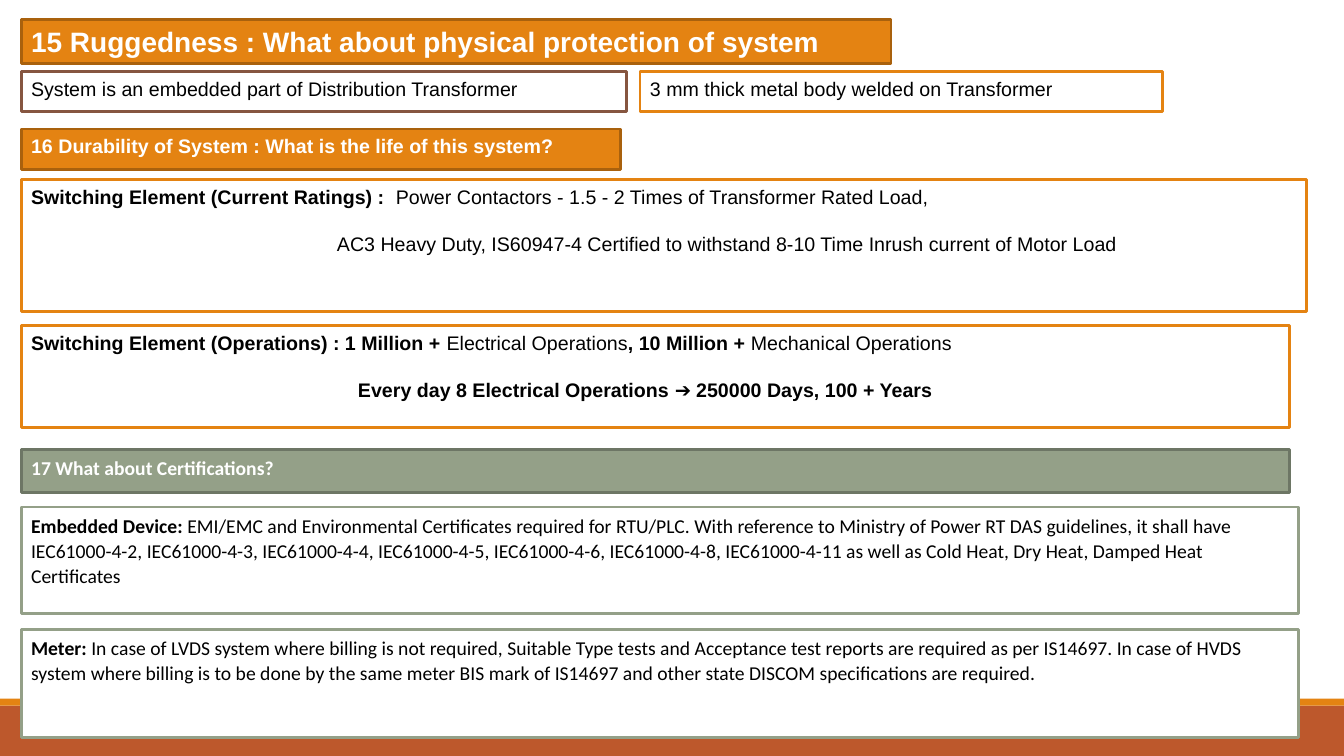
from pptx import Presentation
from pptx.dml.color import RGBColor
from pptx.enum.shapes import MSO_SHAPE
from pptx.enum.text import MSO_ANCHOR, PP_ALIGN
from pptx.util import Pt

COLORS = {
    "orange": "E48312",
    "dark_orange": "A9610D",
    "rust": "BD582C",
    "brown": "865640",
    "sage": "94A088",
    "dark_sage": "6D7665",
    "white": "FFFFFF",
    "black": "000000",
}
LEFT = 15.1
SECOND_LINE_GAP = 17


def rgb(name):
    return RGBColor.from_string(COLORS[name])


def add_bar(slide, left, top, width, height, fill, outline=None):
    bar = slide.shapes.add_shape(
        MSO_SHAPE.RECTANGLE, Pt(left), Pt(top), Pt(width), Pt(height))
    bar.shadow.inherit = False
    bar.fill.solid()
    bar.fill.fore_color.rgb = rgb(fill)
    if outline:
        bar.line.color.rgb = rgb(outline)
        bar.line.width = Pt(2)
    else:
        bar.line.fill.background()
    return bar


def add_line(frame, runs, color, font, size, indent=0):
    """Write one paragraph of (text, bold) runs; an indented one continues the line above."""
    line = frame.paragraphs[0]
    if indent:
        line = frame.add_paragraph()
        line.space_before = Pt(SECOND_LINE_GAP)
        line._p.get_or_add_pPr().set("marL", str(Pt(indent)))
    line.alignment = PP_ALIGN.LEFT
    if font == "Calibri":
        line.line_spacing = 1.07
        line.space_after = Pt(8)
    for text, bold in runs:
        run = line.add_run()
        run.text = text
        run.font.name = font
        run.font.size = Pt(size)
        run.font.bold = bold
        run.font.color.rgb = rgb(color)


def add_panel(slide, top, width, height, runs, outline, fill="white", color="black",
              left=LEFT, font="Arial", size=14, continuation=None, indent=0):
    panel = add_bar(slide, left, top, width, height, fill, outline)
    frame = panel.text_frame
    frame.word_wrap = True
    frame.vertical_anchor = MSO_ANCHOR.TOP
    add_line(frame, runs, color, font, size)
    if continuation:
        add_line(frame, continuation, color, font, size, indent)


def add_heading(slide, top, width, height, text, fill="orange", outline="dark_orange", **style):
    add_panel(slide, top, width, height, [(text, True)], outline, fill, "white", **style)


def add_footer(slide):
    add_bar(slide, 0, 504, 960, 36, "rust")
    add_bar(slide, 0, 499, 960, 5, "orange")


def add_ruggedness(slide):
    add_heading(slide, 13.7, 621.4, 31.7,
                "15 Ruggedness : What about physical protection of system", size=20)
    add_panel(slide, 51.1, 432.7, 28.8,
              [("System is an embedded part of Distribution Transformer", False)], "brown")
    add_panel(slide, 51.1, 373, 28.8,
              [("3 mm thick metal body welded on Transformer", False)], "orange", left=457.2)


def add_durability(slide):
    add_heading(slide, 92.2, 428.4, 28.8,
                "16 Durability of System : What is the life of this system?")
    add_panel(
        slide, 128.2, 918, 94.3,
        [("Switching Element (Current Ratings) :  ", True),
         ("Power Contactors - 1.5 - 2 Times of Transformer Rated Load,", False)],
        "orange", indent=218.5,
        continuation=[("AC3 Heavy Duty, IS60947-4 Certified to withstand 8-10 Time "
                       "Inrush current of Motor Load", False)])
    add_panel(
        slide, 232.6, 905.8, 72.7,
        [("Switching Element (Operations) : 1 Million + ", True),
         ("Electrical Operations", False),
         (", 10 Million + ", True),
         ("Mechanical Operations", False)],
        "orange", indent=233.5,
        continuation=[("Every day 8 Electrical Operations ➔ 250000 Days, 100 + Years", True)])


def add_certifications(slide):
    add_heading(slide, 321.1, 905.8, 31, "17 What about Certifications?",
                "sage", "dark_sage", font="Calibri")
    add_panel(
        slide, 362.2, 912.2, 76.3,
        [("Embedded Device:", True),
         (" EMI/EMC and Environmental Certificates required for RTU/PLC. With reference to "
          "Ministry of Power RT DAS guidelines, it shall have IEC61000-4-2, IEC61000-4-3, "
          "IEC61000-4-4, IEC61000-4-5, IEC61000-4-6, IEC61000-4-8, IEC61000-4-11 as well as "
          "Cold Heat, Dry Heat, Damped Heat Certificates", False)],
        "sage", font="Calibri")
    add_panel(
        slide, 449.6, 912.2, 77,
        [("Meter: ", True),
         ("In case of LVDS system where billing is not required, Suitable Type tests and "
          "Acceptance test reports are required as per IS14697. In case of HVDS system where "
          "billing is to be done by the same meter BIS mark of IS14697 and other state DISCOM "
          "specifications are required.", False)],
        "sage", font="Calibri")


def main():
    deck = Presentation()
    deck.slide_width = Pt(960)
    deck.slide_height = Pt(540)
    slide = deck.slides.add_slide(deck.slide_layouts[6])
    add_footer(slide)
    add_ruggedness(slide)
    add_durability(slide)
    add_certifications(slide)
    deck.save("out.pptx")


if __name__ == "__main__":
    main()
